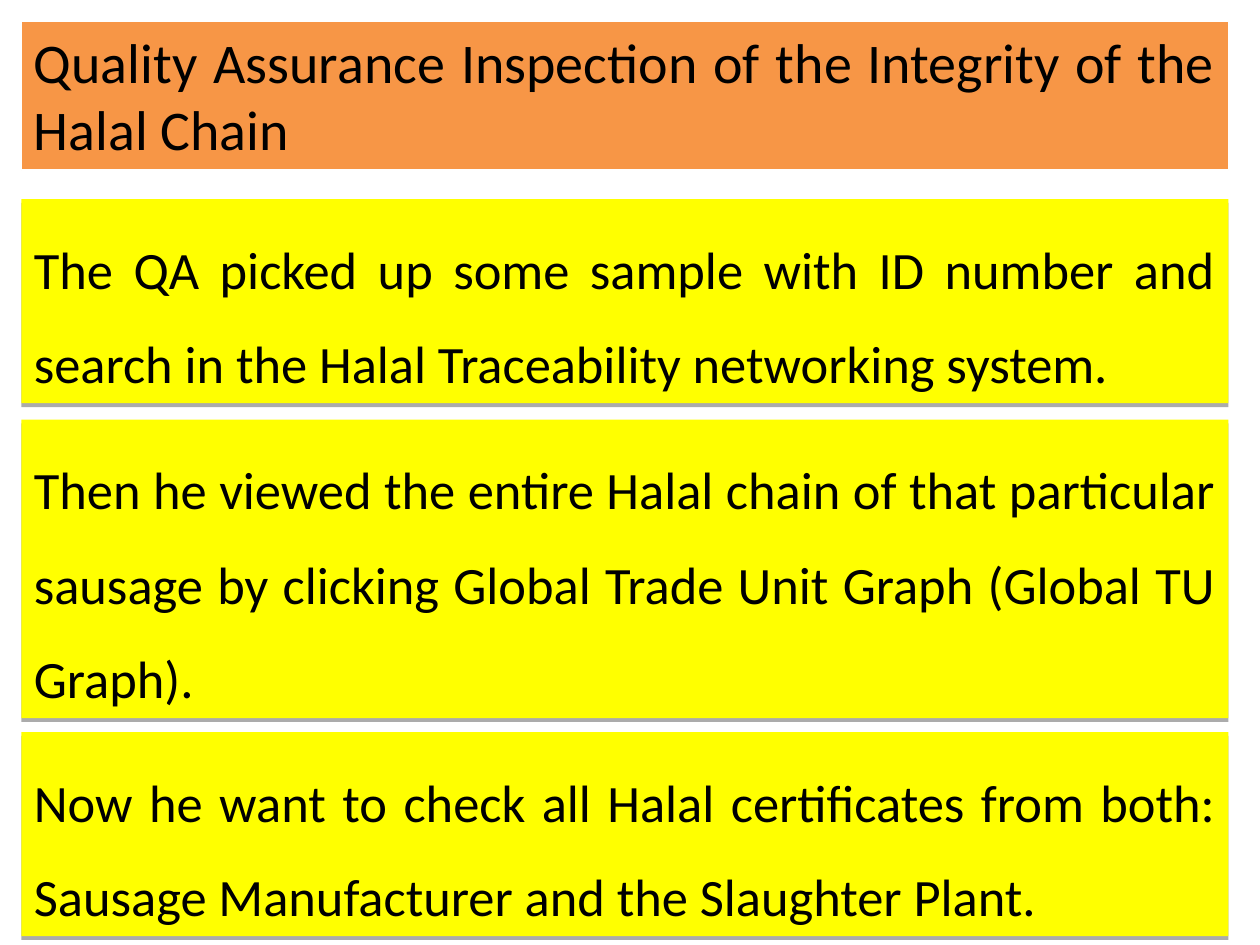
from lxml import etree
from pptx import Presentation
from pptx.dml.color import RGBColor
from pptx.enum.shapes import MSO_SHAPE
from pptx.enum.text import MSO_ANCHOR, MSO_AUTO_SIZE, PP_ALIGN
from pptx.oxml.ns import qn
from pptx.util import Inches, Pt

RECTANGLE = MSO_SHAPE.RECTANGLE
TOP = MSO_ANCHOR.TOP
GROW = MSO_AUTO_SIZE.SHAPE_TO_FIT_TEXT
JUSTIFY = PP_ALIGN.JUSTIFY

COLORS = {"title": "F79646", "step": "FFFF00", "border": "FFFFFF", "text": "000000"}
LEFT, WIDTH = Inches(0.17), Inches(9.58)

STEPS = [
    (1.58, 1.62, "The QA picked up some sample with ID number and search in the "
                 "Halal Traceability networking system."),
    (3.33, 2.37, "Then he viewed the entire Halal chain of that particular sausage by "
                 "clicking Global Trade Unit Graph (Global TU Graph)."),
    (5.81, 1.62, "Now he want to check all Halal certificates from both: Sausage "
                 "Manufacturer and the Slaughter Plant."),
]


def add_text_bar(page, top, height, text, fill, size, line_spacing):
    bar = page.shapes.add_shape(RECTANGLE, LEFT, Inches(top), WIDTH, Inches(height))
    bar.shadow.inherit = False
    bar.fill.solid()
    bar.fill.fore_color.rgb = RGBColor.from_string(COLORS[fill])
    bar.line.fill.background()
    frame = bar.text_frame
    frame.word_wrap = True
    frame.auto_size = GROW
    frame.vertical_anchor = TOP
    para = frame.paragraphs[0]
    para.text = text
    para.alignment = JUSTIFY
    para.line_spacing = line_spacing
    para.font.name = "Calibri"
    para.font.size = Pt(size)
    para.font.color.rgb = RGBColor.from_string(COLORS["text"])
    return bar


def add_drop_shadow(bar):
    effects = bar.element.spPr.find(qn("a:effectLst"))
    shadow = etree.SubElement(effects, qn("a:outerShdw"), blurRad="0",
                              dist=str(Pt(2.2)), dir="5400000", rotWithShape="0")
    color = etree.SubElement(shadow, qn("a:srgbClr"), val=COLORS["text"])
    etree.SubElement(color, qn("a:alpha"), val="32000")


deck = Presentation()
deck.slide_width, deck.slide_height = Inches(10), Inches(7.5)
page = deck.slides.add_slide(deck.slide_layouts[6])

title = add_text_bar(page, 0.17, 1.18,
                     "Quality Assurance Inspection of the Integrity of the Halal Chain",
                     "title", 32, 1.0)
title.line.color.rgb = RGBColor.from_string(COLORS["border"])
title.line.width = Pt(0.75)

for top, height, text in STEPS:
    step = add_text_bar(page, top, height, text, "step", 30, 1.5)
    add_drop_shadow(step)

deck.save("out.pptx")
